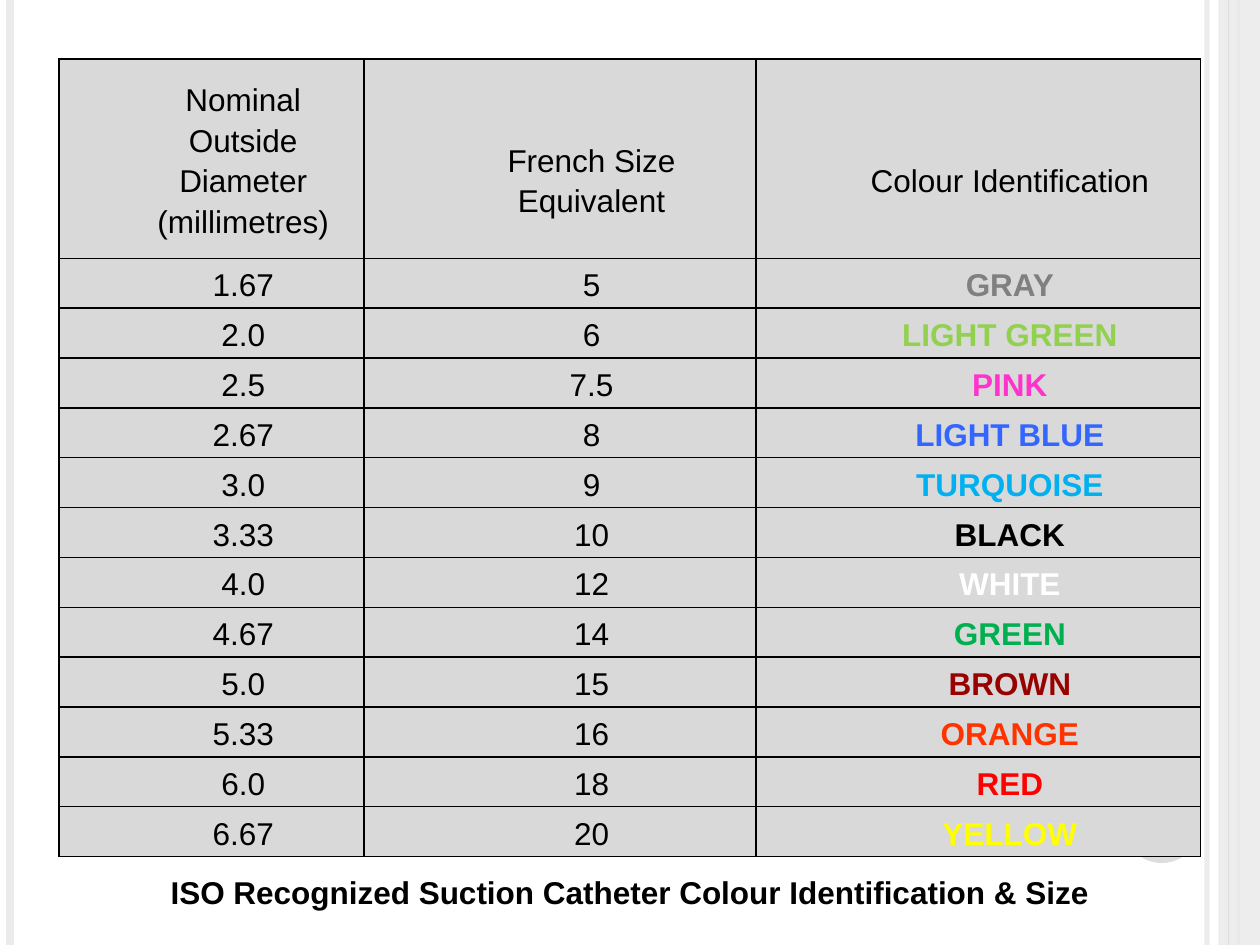
from dataclasses import dataclass

from lxml import etree
from pptx import Presentation
from pptx.dml.color import RGBColor
from pptx.enum.shapes import MSO_CONNECTOR, MSO_SHAPE
from pptx.enum.text import MSO_ANCHOR, MSO_AUTO_SIZE, PP_ALIGN
from pptx.oxml import parse_xml
from pptx.oxml.ns import nsdecls, qn
from pptx.util import Inches, Pt


@dataclass(frozen=True)
class Theme:
    font: str = "Arial"
    size: int = 18
    text: str = "000000"
    border: str = "000000"
    cell: str = "D9D9D9"
    pale: str = "EBEBEB"
    mid: str = "DDDDDD"


THEME = Theme()
SLIDE_WIDTH, SLIDE_HEIGHT = 10, 7.5
LEFT, WIDTH = 0.47, 9.06
TABLE_TOP, TABLE_HEIGHT = 0.47, 6.33
HEADER_HEIGHT = 1.58
COLUMN_WIDTHS = (2.42, 3.11, 3.53)
TEXT_INDENT = 0.5
LINE_SPACING = 1.15

# Lines of each heading, and the top margin that lowers it in its cell
HEADINGS = (
    (("Nominal", "Outside", "Diameter", "(millimetres)"), 0),
    (("French Size", "Equivalent"), 0.32),
    (("Colour Identification",), 0.32),
)
CATHETERS = (
    ("1.67", "5", "GRAY", "808080"),
    ("2.0", "6", "LIGHT GREEN", "92D050"),
    ("2.5", "7.5", "PINK", "FF33CC"),
    ("2.67", "8", "LIGHT BLUE", "3366FF"),
    ("3.0", "9", "TURQUOISE", "00B0F0"),
    ("3.33", "10", "BLACK", "000000"),
    ("4.0", "12", "WHITE", "FFFFFF"),
    ("4.67", "14", "GREEN", "00B050"),
    ("5.0", "15", "BROWN", "990000"),
    ("5.33", "16", "ORANGE", "FF3300"),
    ("6.0", "18", "RED", "FF0000"),
    ("6.67", "20", "YELLOW", "FFFF00"),
)


def set_alpha(fill_owner, percent):
    """Make the solid colour inside a shape's fill or line translucent."""
    color = next(fill_owner.iter(qn("a:srgbClr")))
    etree.SubElement(color, qn("a:alpha")).set("val", str(percent * 1000))


def add_stripe(slide, x, color, width, alpha=None):
    """Draw a vertical line over the full height of the slide."""
    stripe = slide.shapes.add_connector(
        MSO_CONNECTOR.STRAIGHT, Inches(x), 0, Inches(x), Inches(SLIDE_HEIGHT))
    stripe.line.color.rgb = RGBColor.from_string(color)
    stripe.line.width = Pt(width)
    properties = stripe._element.spPr
    if alpha:
        set_alpha(properties, alpha)
    etree.SubElement(properties, qn("a:effectLst"))


def add_plain_shape(slide, kind, left, top, width, height, color, alpha=None):
    shape = slide.shapes.add_shape(
        kind, Inches(left), Inches(top), Inches(width), Inches(height))
    shape.shadow.inherit = False
    shape.fill.solid()
    shape.fill.fore_color.rgb = RGBColor.from_string(color)
    shape.line.fill.background()
    if alpha:
        set_alpha(shape._element.spPr, alpha)


def add_decoration(slide):
    add_stripe(slide, 9.58, THEME.pale, 3, alpha=93)
    add_stripe(slide, 0.08, THEME.pale, 4.5)
    add_stripe(slide, 9.83, THEME.mid, 1.5)
    add_plain_shape(slide, MSO_SHAPE.RECTANGLE, 9.67, 0, 0.33, SLIDE_HEIGHT,
                    THEME.pale, alpha=87)
    add_stripe(slide, 9.75, THEME.mid, 0.75)
    add_plain_shape(slide, MSO_SHAPE.OVAL, 8.92, 6.25, 0.6, 0.6, THEME.mid)


def add_run(paragraph, text, color=THEME.text, bold=False):
    paragraph.alignment = PP_ALIGN.CENTER
    run = paragraph.add_run()
    run.text = text
    run.font.name = THEME.font
    run.font.size = Pt(THEME.size)
    run.font.bold = bold
    run.font.color.rgb = RGBColor.from_string(color)


def set_borders(cell):
    properties = cell._tc.get_or_add_tcPr()
    for side in ("lnL", "lnR", "lnT", "lnB"):
        properties.append(parse_xml(
            f'<a:{side} {nsdecls("a")} w="{Pt(1)}"><a:solidFill>'
            f'<a:srgbClr val="{THEME.border}"/></a:solidFill></a:{side}>'))


def fill_cell(cell, lines, color=THEME.text, bold=False, top_margin=0):
    set_borders(cell)
    cell.fill.solid()
    cell.fill.fore_color.rgb = RGBColor.from_string(THEME.cell)
    cell.vertical_anchor = MSO_ANCHOR.MIDDLE
    cell.margin_left = cell.margin_right = Inches(0.07)
    cell.margin_top, cell.margin_bottom = Inches(top_margin), 0
    frame = cell.text_frame
    for index, line in enumerate(lines):
        paragraph = frame.add_paragraph() if index else frame.paragraphs[0]
        paragraph.line_spacing = LINE_SPACING
        indent = paragraph._p.get_or_add_pPr()
        indent.set("marL", str(Inches(TEXT_INDENT)))
        indent.set("indent", "0")
        add_run(paragraph, line, color, bold)


def add_catheter_table(slide):
    table = slide.shapes.add_table(
        len(CATHETERS) + 1, len(COLUMN_WIDTHS), Inches(LEFT), Inches(TABLE_TOP),
        Inches(WIDTH), Inches(TABLE_HEIGHT)).table
    table.horz_banding = False
    for column, width in zip(table.columns, COLUMN_WIDTHS):
        column.width = Inches(width)
    row_height = (TABLE_HEIGHT - HEADER_HEIGHT) / len(CATHETERS)
    for index, row in enumerate(table.rows):
        row.height = Inches(row_height if index else HEADER_HEIGHT)

    for column, (lines, top_margin) in enumerate(HEADINGS):
        fill_cell(table.cell(0, column), lines, top_margin=top_margin)
    for row, (diameter, french_size, name, color) in enumerate(CATHETERS, 1):
        fill_cell(table.cell(row, 0), [diameter])
        fill_cell(table.cell(row, 1), [french_size])
        fill_cell(table.cell(row, 2), [name], color, bold=True)


def set_title(slide, text):
    title = slide.shapes.title
    title.left, title.top = Inches(LEFT), Inches(6.88)
    title.width, title.height = Inches(WIDTH), Inches(0.4)
    frame = title.text_frame
    frame.word_wrap = True
    frame.auto_size = MSO_AUTO_SIZE.SHAPE_TO_FIT_TEXT
    frame.vertical_anchor = MSO_ANCHOR.TOP
    add_run(frame.paragraphs[0], text, bold=True)


def main():
    presentation = Presentation()
    presentation.slide_width = Inches(SLIDE_WIDTH)
    presentation.slide_height = Inches(SLIDE_HEIGHT)
    title_only = presentation.slide_layouts.get_by_name("Title Only")
    slide = presentation.slides.add_slide(title_only)
    add_decoration(slide)
    add_catheter_table(slide)
    set_title(slide, "ISO Recognized Suction Catheter Colour Identification & Size")
    presentation.save("out.pptx")


if __name__ == "__main__":
    main()
